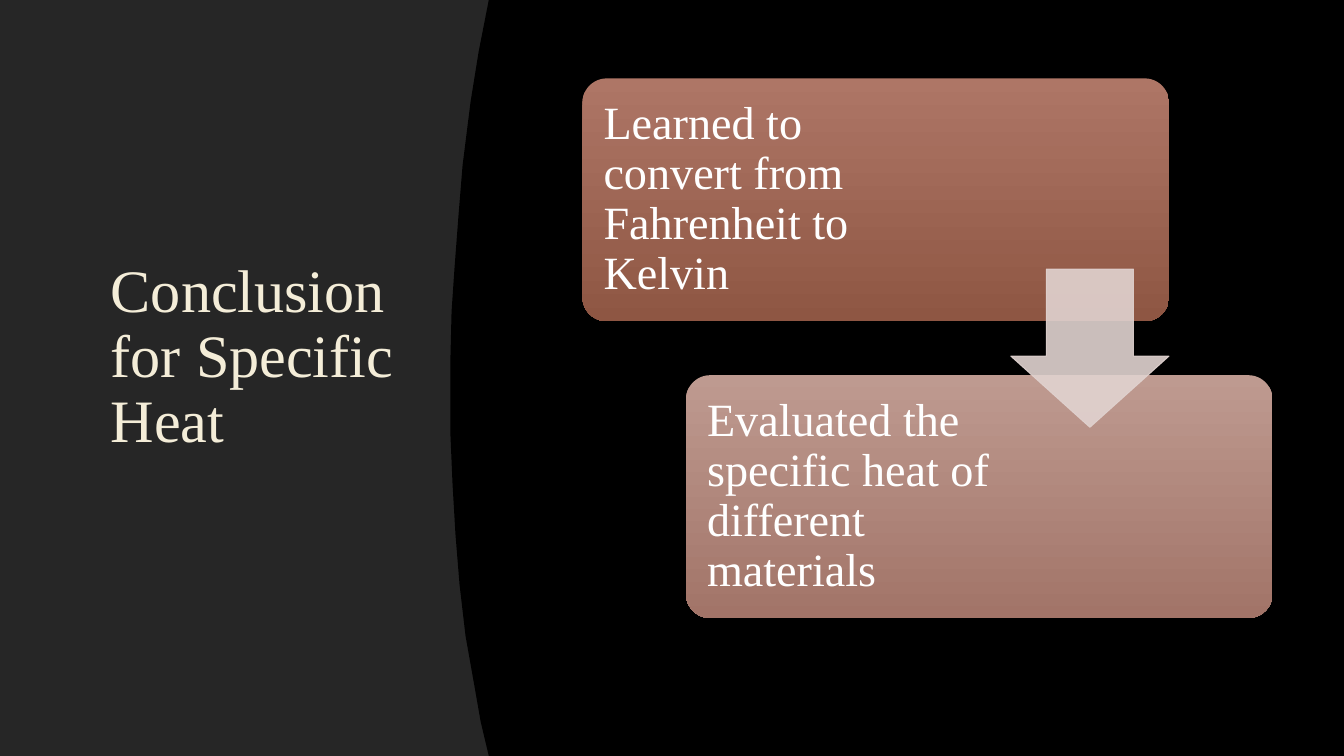
import pptx
import pptx.dml.color
import pptx.enum.shapes
import pptx.enum.text
import pptx.oxml
import pptx.oxml.ns
import pptx.util

Pt = pptx.util.Pt
SHAPE = pptx.enum.shapes.MSO_SHAPE
ANCHOR = pptx.enum.text.MSO_ANCHOR
FONT = "Times New Roman"
WIDTH, HEIGHT = 960, 540

# Left edge of the black area, from top to bottom
CURVE = [(349.2, 0), (342, 36.7), (336.2, 72.7), (330.5, 118), (327.6, 153.4),
         (324.7, 191.5), (322.6, 222.5), (321.8, 254.9), (321.8, 311),
         (323.3, 345.6), (325.4, 381.6), (328.3, 417.6), (332.6, 454.3),
         (339.1, 491), (343.4, 515.5), (349.2, HEIGHT)]

# Text, text width, gradient top and bottom
STEPS = [
    ("Learned to convert from Fahrenheit to Kelvin", 240, "AE7666", "8E5643"),
    ("Evaluated the specific heat of different materials", 222.5, "BE9A90", "A27468"),
]


def rgb(value):
    return pptx.dml.color.RGBColor.from_string(value)


def xml(text):
    ns = pptx.oxml.ns.nsdecls("a")
    return pptx.oxml.parse_xml(text.replace(" NS", " " + ns, 1))


def paint(sp, color):
    sp.shadow.inherit = False
    sp.fill.solid()
    sp.fill.fore_color.rgb = rgb(color)
    sp.line.fill.background()


def set_text(sp, text, size, color):
    tf = sp.text_frame
    tf.word_wrap = True
    tf.auto_size = pptx.enum.text.MSO_AUTO_SIZE.NONE
    tf.vertical_anchor = ANCHOR.MIDDLE
    p = tf.paragraphs[0]
    p.text = text
    p.alignment = pptx.enum.text.PP_ALIGN.LEFT
    p.line_spacing = 0.9
    p.font.name = FONT
    p.font.size = Pt(size)
    p.font.color.rgb = rgb(color)
    return p


def add_backdrop(s):
    """Grey panel with a curved black area, both behind the title."""
    panel = s.shapes.add_shape(SHAPE.RECTANGLE, 0, 0, Pt(WIDTH), Pt(HEIGHT))
    paint(panel, "262626")
    fb = s.shapes.build_freeform(Pt(WIDTH), 0)
    points = CURVE + [(WIDTH, HEIGHT)]
    fb.add_line_segments([(Pt(x), Pt(y)) for x, y in points], close=True)
    area = fb.convert_to_shape()
    paint(area, "000000")
    for sp in (panel, area):
        s.shapes.title.element.addprevious(sp.element)


def add_title(s, left, top, width, height):
    title = s.shapes.title
    title.left, title.top = Pt(left), Pt(top)
    title.width, title.height = Pt(width), Pt(height)
    p = set_text(title, "Conclusion for Specific Heat", 43, "F4EDD8")
    r = p.runs[0]
    r.font.color.rgb = rgb("F4EDD8")
    rpr = r.font.fill
    rpr = r.r_pr if hasattr(r, "r_pr") else p.runs[0].font.color and title.element.find(
        ".//" + pptx.oxml.ns.qn("a:rPr"))
    rpr.insert(0, xml('<a:ln NS w="9525"><a:solidFill><a:srgbClr val="404040">'
                      '<a:alpha val="10000"/></a:srgbClr></a:solidFill></a:ln>'))
    rpr.append(xml('<a:effectLst NS><a:outerShdw blurRad="38100" dist="25400" dir="2700000">'
                   '<a:srgbClr val="000000"><a:alpha val="60000"/></a:srgbClr>'
                   '</a:outerShdw></a:effectLst>'))


def add_step(shapes, left, top, width, height, step):
    text, text_width, light, dark = step
    box = shapes.add_shape(SHAPE.ROUNDED_RECTANGLE, Pt(left), Pt(top), Pt(width), Pt(height))
    box.adjustments[0] = 0.1
    box.shadow.inherit = False
    box.line.fill.background()
    box.fill.gradient()
    box.fill.gradient_angle = 270
    for stop, color in zip(box.fill.gradient_stops, (light, dark)):
        stop.color.rgb = rgb(color)
    pad = 5.1
    label = shapes.add_textbox(Pt(left + pad), Pt(top + pad), Pt(text_width), Pt(height - 2 * pad))
    tf = label.text_frame
    tf.margin_left = tf.margin_right = tf.margin_top = tf.margin_bottom = Pt(10)
    set_text(label, text, 33, "FFFFFF")


def add_arrow(shapes, left, top, size):
    arrow = shapes.add_shape(SHAPE.DOWN_ARROW, Pt(left), Pt(top), Pt(size), Pt(size))
    arrow.adjustments[0] = 0.45
    arrow.adjustments[1] = 0.55
    arrow.adjustments[0], arrow.adjustments[1] = 0.55, 0.45
    paint(arrow, "E1D3D0")
    arrow.line.color.rgb = rgb("E1D3D0")
    arrow.line.width = Pt(0.75)
    for color in arrow.element.spPr.iter(pptx.oxml.ns.qn("a:srgbClr")):
        color.append(xml('<a:alpha NS val="90000"/>'))


def add_process(s, left, top, width, height):
    """Two boxes at opposite corners, with an arrow from the first to the second."""
    shapes = s.shapes.add_group_shape().shapes
    box_w, box_h, arrow = 0.85 * width, 0.45 * height, 113
    for i, step in enumerate(STEPS):
        add_step(shapes, left + i * (width - box_w), top + i * (height - box_h),
                 box_w, box_h, step)
    add_arrow(shapes, left + box_w - arrow, top + (height - arrow) / 2, arrow)


def main():
    prs = pptx.Presentation()
    prs.slide_width, prs.slide_height = Pt(WIDTH), Pt(HEIGHT)
    s = prs.slides.add_slide(prs.slide_layouts[5])
    s.background.fill.solid()
    s.background.fill.fore_color.rgb = rgb("000000")
    add_backdrop(s)
    add_title(s, 72, 48, 220.5, 415.5)
    add_process(s, 416, 56, 493, 385.5)
    prs.save("out.pptx")


if __name__ == "__main__":
    main()
